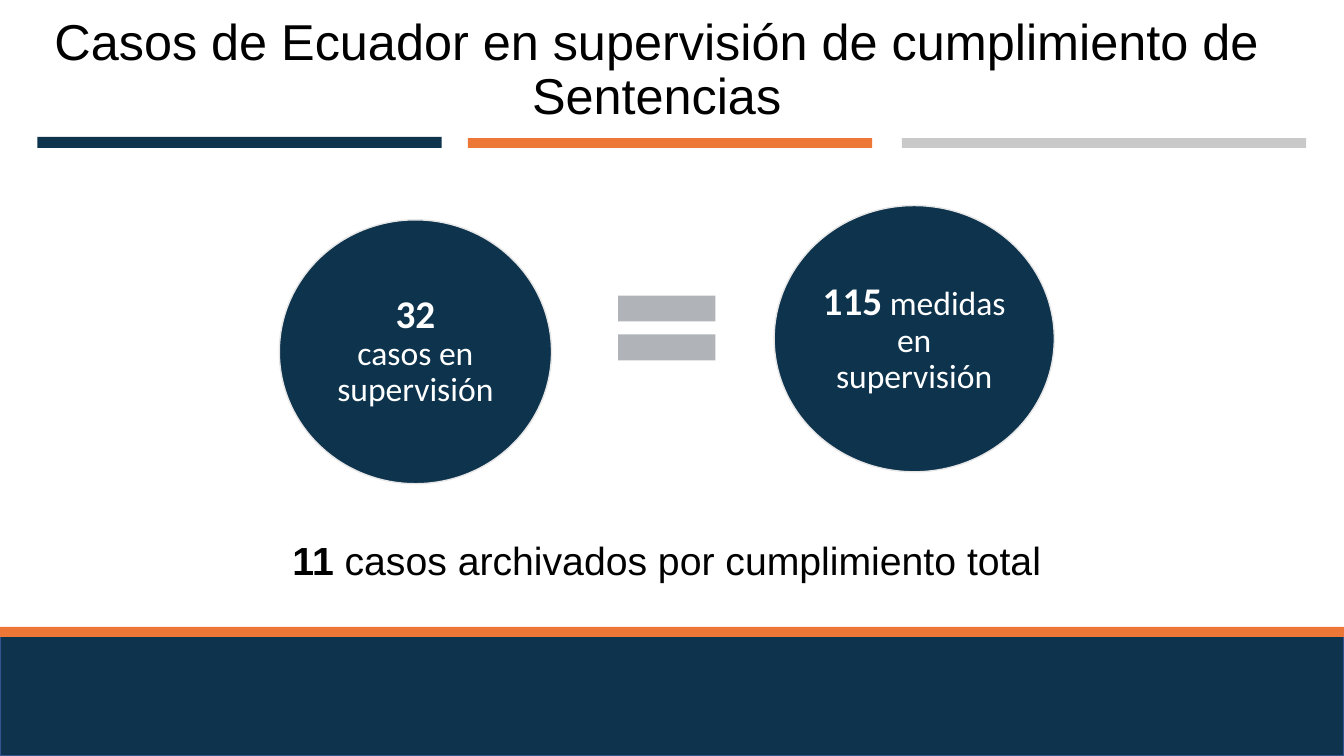
from dataclasses import dataclass

from pptx import Presentation
from pptx.dml.color import RGBColor
from pptx.enum.shapes import MSO_SHAPE
from pptx.enum.text import MSO_ANCHOR, PP_ALIGN
from pptx.util import Cm, Pt


@dataclass(frozen=True)
class Theme:
    navy: str = "0D334D"
    orange: str = "ED7736"
    silver: str = "C9C9C9"
    equal_gray: str = "B0B4B9"
    footer_edge: str = "325491"
    circle_edge: str = "E7E6E6"
    white: str = "FFFFFF"
    black: str = "000000"
    heading_font: str = "Arial"
    circle_font: str = "Calibri"
    title_size: int = 36
    figure_size: int = 28
    label_size: int = 24


theme = Theme()
presentation = Presentation()
presentation.slide_width = Cm(33.87)
presentation.slide_height = Cm(19.05)
slide = presentation.slides.add_slide(presentation.slide_layouts[6])


def add_block(kind, left, top, width, height, fill, edge=None):
    block = slide.shapes.add_shape(kind, Cm(left), Cm(top), Cm(width), Cm(height))
    block.shadow.inherit = False
    block.fill.solid()
    block.fill.fore_color.rgb = RGBColor.from_string(fill)
    if edge:
        block.line.color.rgb = RGBColor.from_string(edge)
        block.line.width = Pt(1)
    else:
        block.line.fill.background()
    return block


def write(holder, paragraphs, font, color):
    """Fill holder with paragraphs, each a list of (text, size, bold)."""
    frame = holder.text_frame
    frame.word_wrap = True
    frame.vertical_anchor = MSO_ANCHOR.MIDDLE
    frame.text = "\n".join("" for _ in paragraphs)
    for paragraph, pieces in zip(frame.paragraphs, paragraphs):
        paragraph.alignment = PP_ALIGN.CENTER
        paragraph.line_spacing = 0.9
        for text, size, bold in pieces:
            run = paragraph.add_run()
            run.text = text
            run.font.name = font
            run.font.size = Pt(size)
            run.font.bold = bold
            run.font.color.rgb = RGBColor.from_string(color)


# Three-colour rule under the title
for left, top, height, color in [
    (0.94, 3.45, 0.28, theme.navy),
    (11.79, 3.48, 0.25, theme.orange),
    (22.73, 3.48, 0.25, theme.silver),
]:
    add_block(MSO_SHAPE.RECTANGLE, left, top, 10.19, height, color)

# Footer band
add_block(MSO_SHAPE.RECTANGLE, 0, 16, 33.87, 3.05, theme.navy, theme.footer_edge)
add_block(MSO_SHAPE.RECTANGLE, 0, 15.8, 33.87, 0.25, theme.orange)

# Cases = measures
cases = [
    [("32", theme.figure_size, True)],
    [("casos en supervisión", theme.label_size, False)],
]
measures = [
    [
        ("115", theme.figure_size, True),
        (" ", theme.label_size, True),
        ("medidas en supervisión", theme.label_size, False),
    ]
]
for left, top, width, height, wording in [
    (7.04, 5.54, 6.86, 6.65, cases),
    (19.51, 5.18, 7.06, 6.71, measures),
]:
    circle = add_block(
        MSO_SHAPE.OVAL, left, top, width, height, theme.navy, theme.circle_edge
    )
    frame = circle.text_frame
    frame.margin_left = frame.margin_right = Cm(0.18)
    frame.margin_top = frame.margin_bottom = Cm(0.18)
    write(circle, wording, theme.circle_font, theme.white)
add_block(MSO_SHAPE.MATH_EQUAL, 15.14, 6.88, 3.33, 2.77, theme.equal_gray)

# Title and archived cases
title = [("Casos de Ecuador en supervisión de cumplimiento de Sentencias",
          theme.title_size, False)]
archived = [
    ("11 ", theme.figure_size, True),
    ("casos archivados por cumplimiento total", theme.figure_size, False),
]
for left, top, height, wording in [
    (0.94, 0.43, 2.74, title),
    (1.19, 12.14, 4.06, archived),
]:
    heading = slide.shapes.add_textbox(Cm(left), Cm(top), Cm(31.22), Cm(height))
    write(heading, [wording], theme.heading_font, theme.black)

presentation.save("out.pptx")
